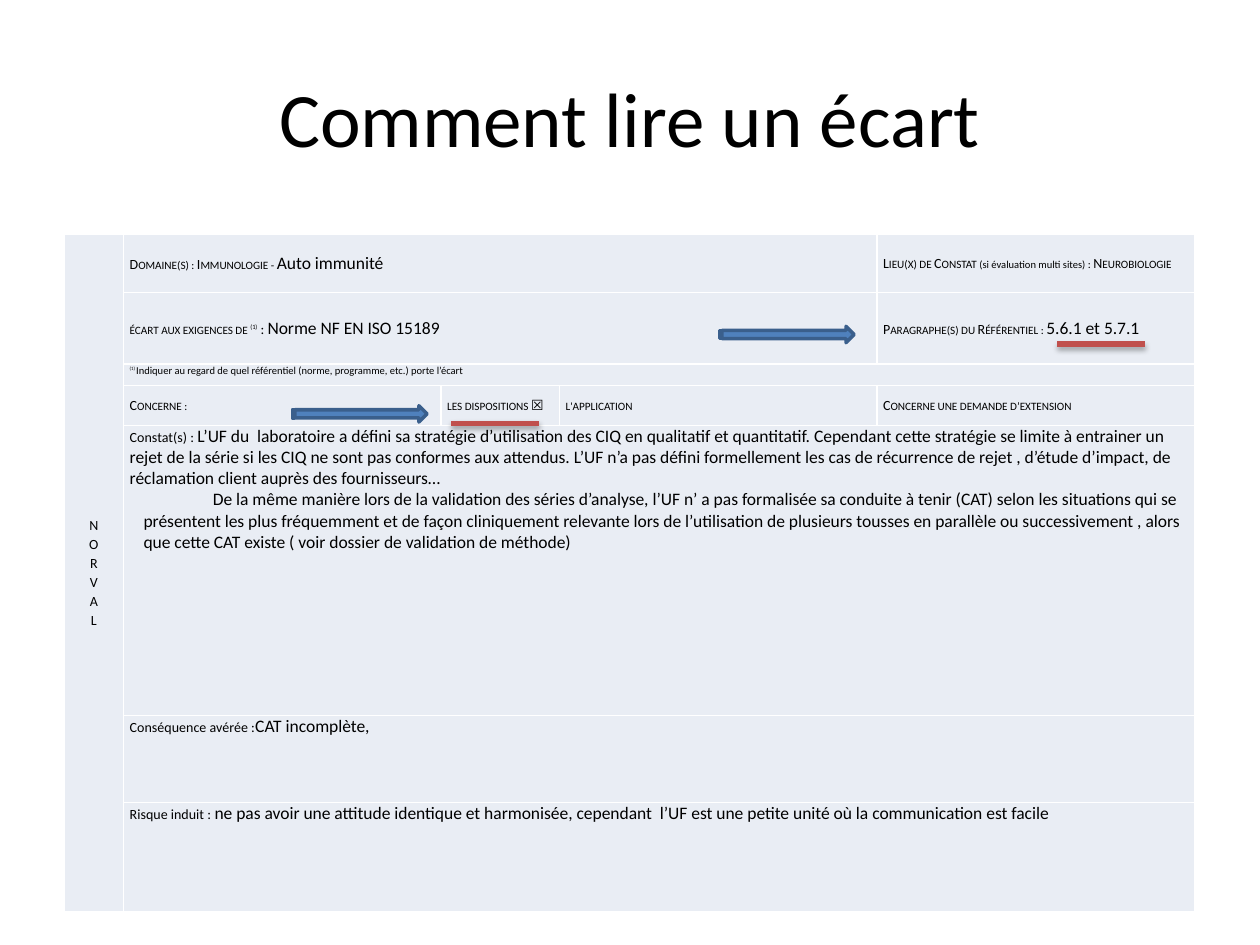
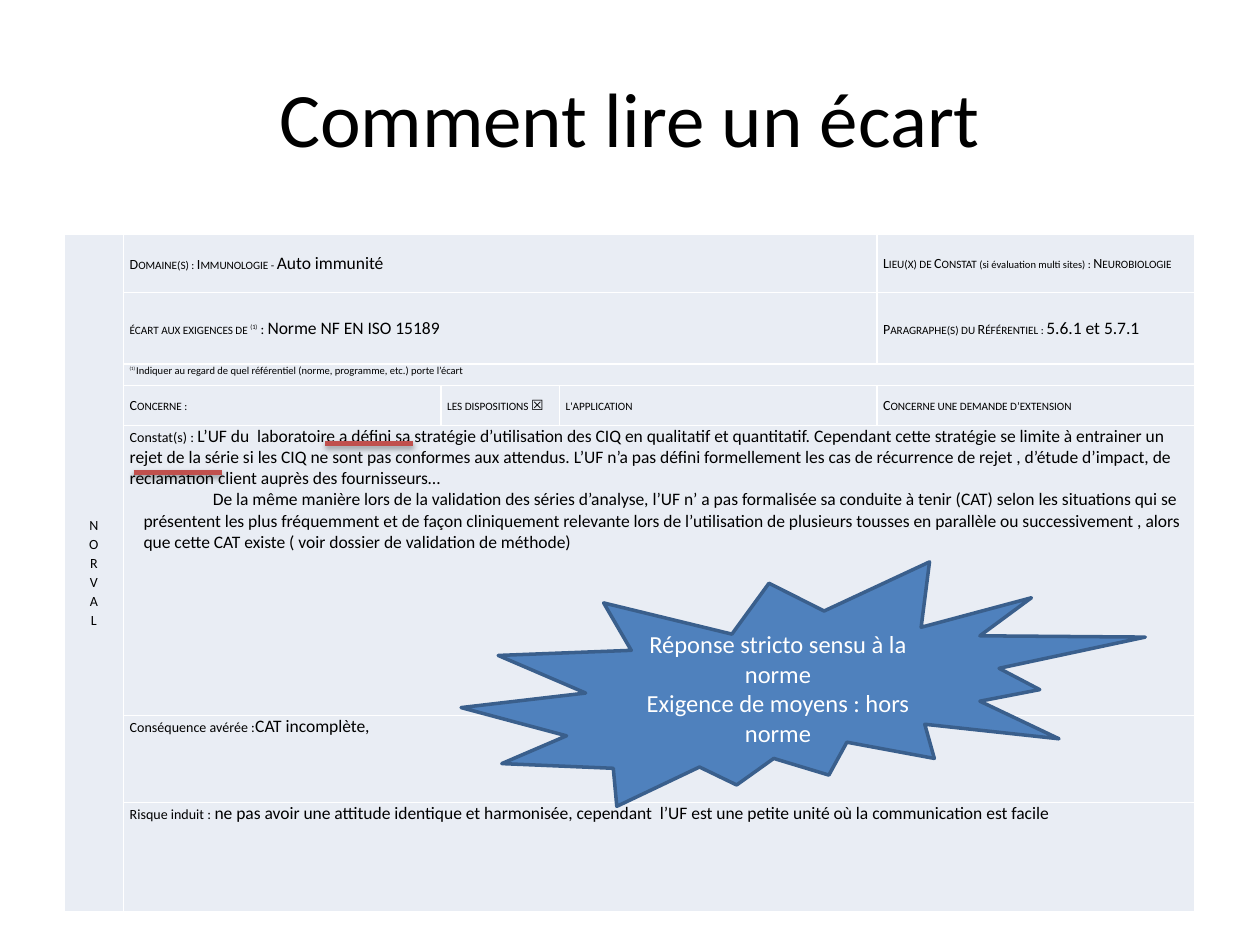
"""Builds two slides that show how to read an audit finding form."""
from dataclasses import dataclass
from typing import Any

from lxml import etree
from pptx import Presentation
from pptx.dml.color import RGBColor
from pptx.enum.shapes import MSO_CONNECTOR, MSO_SHAPE
from pptx.enum.text import MSO_ANCHOR, PP_ALIGN
from pptx.oxml.ns import qn
from pptx.util import Inches, Pt

STRAIGHT = MSO_CONNECTOR.STRAIGHT
ARROW = MSO_SHAPE.STRIPED_RIGHT_ARROW
BURST = MSO_SHAPE.EXPLOSION2
MIDDLE, TOP = MSO_ANCHOR.MIDDLE, MSO_ANCHOR.TOP
CENTER = PP_ALIGN.CENTER

FONT = "Calibri"
TITLE = "Comment lire un écart"
COLORS = {
    "text": "000000",
    "light_text": "FFFFFF",
    "cell": "E9EDF4",
    "border": "FFFFFF",
    "shape": "4F81BD",
    "outline": "3A5F8C",
    "underline": "C0504D",
    "shadow": "000000",
}
COLUMN_WIDTHS = (0.47, 2.52, 0.94, 2.52, 2.52)
ROW_HEIGHTS = (0.46, 0.57, 0.17, 0.32, 2.3, 0.69, 0.68)
TABLE_LEFT, TABLE_TOP = 0.51, 1.86
UNDERLINE_WIDTH = 0.7
CELL_FORMAT = {
    "margin_left": Inches(0.05),
    "margin_right": Inches(0.05),
    "margin_top": 0,
    "margin_bottom": 0,
}


@dataclass(frozen=True)
class Run:
    text: str
    size: float = 8
    small_caps: bool = False
    raised: bool = False
    color: str = "text"


@dataclass(frozen=True)
class Line:
    runs: tuple[Run, ...]
    before: float = 0
    centered: bool = False
    margin: float = 0
    indent: float = 0


@dataclass(frozen=True)
class FormCell:
    row: int
    column: int
    lines: tuple[Line, ...]
    row_span: int = 1
    column_span: int = 1
    anchor: Any = MIDDLE


@dataclass(frozen=True)
class Box:
    left: float
    top: float
    width: float
    height: float

    def lengths(self) -> tuple[int, ...]:
        return tuple(Inches(v) for v in (self.left, self.top, self.width, self.height))


@dataclass(frozen=True)
class Callout:
    kind: Any
    box: Box
    lines: tuple[Line, ...] = ()


@dataclass(frozen=True)
class SlideMarks:
    underlines: tuple[tuple[float, float], ...]
    callouts: tuple[Callout, ...]


def caps(text: str) -> Run:
    return Run(text, small_caps=True)


def field(row: int, column: int, *runs: Run, span: int = 1) -> FormCell:
    return FormCell(row, column, (Line(runs),), column_span=span)


def wide_field(row: int, *lines: Line) -> FormCell:
    return FormCell(row, 1, lines, column_span=4, anchor=TOP)


def answer(label: str, text: str) -> Line:
    return Line((Run(label), Run(text, 10)), before=2)


FORM = (
    FormCell(0, 0, tuple(Line((Run(letter),), 1, True) for letter in "NORVAL"),
             row_span=len(ROW_HEIGHTS)),
    field(0, 1, caps("Domaine(s) : Immunologie - "), Run("Auto immunité", 10), span=3),
    field(0, 4, caps("Lieu(x) de Constat "), Run("(si évaluation multi sites)", 6),
          caps(" : Neurobiologie")),
    field(1, 1, caps("écart aux exigences de "), Run("(1)", 8, True, True), Run(" : "),
          Run("Norme NF EN ISO 15189", 10), span=3),
    field(1, 4, caps("Paragraphe(s) du Référentiel : "), Run("5.6.1 et 5.7.1", 10)),
    wide_field(2, Line((
        Run("(1) ", 6, True, True),
        Run("Indiquer au regard de quel référentiel (norme, programme, etc.) "
            "porte l’écart", 6)))),
    field(3, 1, caps("Concerne :")),
    field(3, 2, caps("les dispositions "), Run("☒")),
    field(3, 3, caps("l'application")),
    field(3, 4, caps("Concerne une demande d’extension")),
    wide_field(
        4,
        answer("Constat(s) : ",
               "L’UF du  laboratoire a défini sa stratégie d’utilisation des CIQ en "
               "qualitatif et quantitatif. Cependant cette stratégie se limite à "
               "entrainer un rejet de la série si les CIQ ne sont pas conformes aux "
               "attendus. L’UF n’a pas défini formellement les cas de récurrence de "
               "rejet , d’étude d’impact, de réclamation client auprès des "
               "fournisseurs…"),
        Line((Run(
            "De la même manière lors de la validation des séries d’analyse, l’UF n’ a "
            "pas formalisée sa conduite à tenir (CAT) selon les situations qui se "
            "présentent les plus fréquemment et de façon cliniquement relevante lors "
            "de l’utilisation de plusieurs tousses en parallèle ou successivement , "
            "alors que cette CAT existe ( voir dossier de validation de méthode)",
            10),), margin=0.11, indent=0.55)),
    wide_field(5, answer("Conséquence avérée :", "CAT incomplète,")),
    wide_field(6, answer(
        "Risque induit : ",
        "ne pas avoir une attitude identique et harmonisée, cependant  l’UF est une "
        "petite unité où la communication est facile")),
)

BURST_LINES = tuple(
    Line((Run(text, 14, color="light_text"),), centered=True)
    for text in ("Réponse stricto sensu à la norme", "Exigence de moyens : hors norme")
)
SLIDES = (
    SlideMarks(((8.39, 2.73), (3.58, 3.36)),
               tuple(Callout(ARROW, Box(left, top, 1.07, 0.13))
                     for left, top in ((5.71, 2.59), (2.32, 3.22)))),
    SlideMarks(((2.58, 3.52), (1.06, 3.75)),
               (Callout(BURST, Box(3.66, 4.46, 5.43, 1.94), BURST_LINES),)),
)


def rgb(name: str) -> RGBColor:
    return RGBColor.from_string(COLORS[name])


def set_format(target: Any, values: dict[str, Any]) -> None:
    for name, value in values.items():
        setattr(target, name, value)


def write_lines(text_frame: Any, lines: tuple[Line, ...]) -> None:
    for index, line in enumerate(lines):
        paragraph = text_frame.add_paragraph() if index else text_frame.paragraphs[0]
        set_format(paragraph, {"space_before": Pt(line.before),
                               "alignment": CENTER if line.centered else PP_ALIGN.LEFT})
        if line.margin:
            properties = paragraph._p.get_or_add_pPr()
            properties.set("marL", str(Inches(line.margin)))
            properties.set("indent", str(Inches(line.indent)))
        for item in line.runs:
            run = paragraph.add_run()
            set_format(run, {"text": item.text})
            set_format(run.font, {"name": FONT, "size": Pt(item.size), "bold": False})
            run.font.color.rgb = rgb(item.color)
            properties = run._r.get_or_add_rPr()
            if item.small_caps:
                properties.set("cap", "small")
            if item.raised:
                properties.set("baseline", "30000")


def add_color(parent: Any, name: str) -> Any:
    return etree.SubElement(parent, qn("a:srgbClr"), val=COLORS[name])


def style_cell(cell: Any) -> None:
    set_format(cell, CELL_FORMAT)
    cell.fill.solid()
    cell.fill.fore_color.rgb = rgb("cell")
    properties = cell._tc.get_or_add_tcPr()
    for index, side in enumerate("LRTB"):
        border = etree.Element(qn(f"a:ln{side}"), w=str(Pt(1)))
        add_color(etree.SubElement(border, qn("a:solidFill")), "border")
        properties.insert(index, border)


def add_title(slide: Any) -> None:
    shape = slide.shapes.add_textbox(*Box(0.5, 0.3, 9, 1.25).lengths())
    set_format(shape.text_frame, {"word_wrap": True, "vertical_anchor": MIDDLE})
    write_lines(shape.text_frame, (Line((Run(TITLE, 44),), centered=True),))


def add_form(slide: Any) -> None:
    box = Box(TABLE_LEFT, TABLE_TOP, sum(COLUMN_WIDTHS), sum(ROW_HEIGHTS))
    table = slide.shapes.add_table(
        len(ROW_HEIGHTS), len(COLUMN_WIDTHS), *box.lengths()).table
    set_format(table, {"first_row": False, "horz_banding": False})
    for column, width in zip(table.columns, COLUMN_WIDTHS):
        column.width = Inches(width)
    for row, height in zip(table.rows, ROW_HEIGHTS):
        row.height = Inches(height)
    for cell in table.iter_cells():
        style_cell(cell)
    for item in FORM:
        cell = table.cell(item.row, item.column)
        if item.row_span > 1 or item.column_span > 1:
            cell.merge(table.cell(item.row + item.row_span - 1,
                                  item.column + item.column_span - 1))
        cell.vertical_anchor = item.anchor
        write_lines(cell.text_frame, item.lines)


def add_underline(slide: Any, left: float, top: float) -> None:
    connector = slide.shapes.add_connector(
        STRAIGHT, Inches(left), Inches(top), Inches(left + UNDERLINE_WIDTH), Inches(top))
    connector.line.width = Pt(3)
    connector.line.color.rgb = rgb("underline")
    effects = etree.SubElement(connector._element.spPr, qn("a:effectLst"))
    shadow = etree.SubElement(
        effects, qn("a:outerShdw"), blurRad=str(Pt(3.1)), dist=str(Pt(1.8)),
        dir="5400000", rotWithShape="0")
    etree.SubElement(add_color(shadow, "shadow"), qn("a:alpha"), val="35000")


def add_callout(slide: Any, callout: Callout) -> None:
    shape = slide.shapes.add_shape(callout.kind, *callout.box.lengths())
    shape.shadow.inherit = False
    shape.fill.solid()
    shape.fill.fore_color.rgb = rgb("shape")
    shape.line.color.rgb = rgb("outline")
    shape.line.width = Pt(2)
    set_format(shape.text_frame, {"word_wrap": True, "vertical_anchor": MIDDLE})
    write_lines(shape.text_frame, callout.lines)


def main() -> None:
    presentation = Presentation()
    set_format(presentation, {"slide_width": Inches(10), "slide_height": Inches(7.5)})
    for marks in SLIDES:
        slide = presentation.slides.add_slide(presentation.slide_layouts[6])
        add_title(slide)
        add_form(slide)
        for left, top in marks.underlines:
            add_underline(slide, left, top)
        for callout in marks.callouts:
            add_callout(slide, callout)
    presentation.save("out.pptx")


if __name__ == "__main__":
    main()
